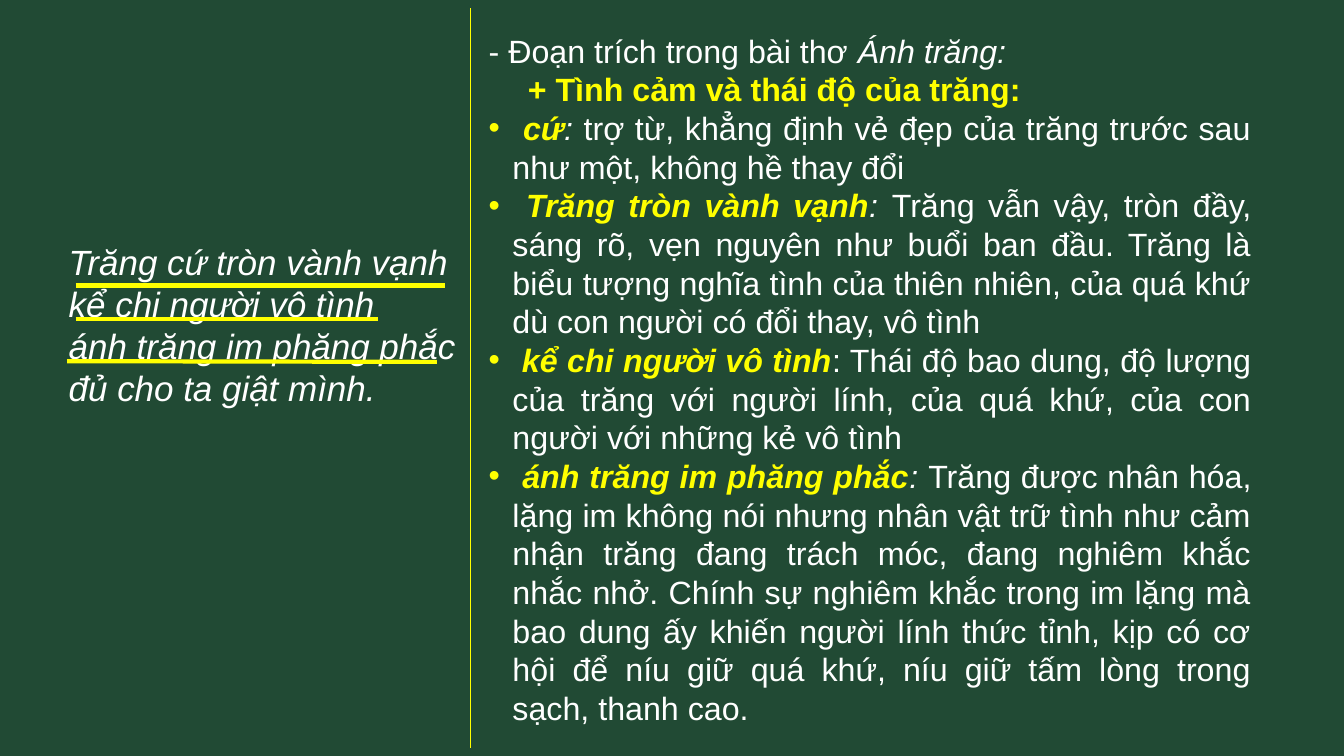
from dataclasses import dataclass

import pptx
import pptx.dml.color
import pptx.enum.shapes
import pptx.enum.text
import pptx.oxml
import pptx.oxml.ns
import pptx.util
from pptx.util import Pt


@dataclass(frozen=True)
class Theme:
    background: str = "214A34"
    text: str = "FFFFFF"
    accent: str = "FFFF00"
    font: str = "Arial"
    poem_size: float = 25
    analysis_size: float = 23
    line_height: float = 1.2
    divider_width: float = 0.5
    underline_width: float = 3


@dataclass(frozen=True)
class Rule:
    start: tuple[float, float]
    end: tuple[float, float]
    width: float


@dataclass(frozen=True)
class Span:
    text: str
    accent: bool = False
    bold: bool = False
    italic: bool = False


@dataclass(frozen=True)
class Line:
    spans: tuple[Span, ...]
    justified: bool = True
    bulleted: bool = False
    indent: float = 0


@dataclass(frozen=True)
class TextBox:
    left: float
    top: float
    width: float
    height: float
    size: float
    lines: tuple[Line, ...]


THEME = Theme()
BULLET_INDENT = 17


def gloss(quote: str, colon: str, meaning: str) -> Line:
    spans = (
        Span(quote, accent=True, bold=True, italic=True),
        Span(colon, italic=True),
        Span(meaning),
    )
    return Line(tuple(span for span in spans if span.text), bulleted=True)


POEM = TextBox(42, 168, 384, 128, THEME.poem_size, tuple(
    Line((Span(verse, italic=True),), justified=False)
    for verse in (
        "Trăng cứ tròn vành vạnh",
        "kể chi người vô tình",
        "ánh trăng im phăng phắc",
        "đủ cho ta giật mình.",
    )
))

ANALYSIS = TextBox(342, 18.7, 559.5, 509, THEME.analysis_size, (
    Line((Span("- Đoạn trích trong bài thơ "), Span("Ánh trăng:", italic=True))),
    Line((Span("+ Tình cảm và thái độ của trăng:", accent=True, bold=True),), indent=28),
    gloss(" cứ", ":", " trợ từ, khẳng định vẻ đẹp của trăng trước sau như một, không hề thay đổi"),
    gloss(
        " Trăng tròn vành vạnh", ": ",
        "Trăng vẫn vậy, tròn đầy, sáng rõ, vẹn nguyên như buổi ban đầu. "
        "Trăng là biểu tượng nghĩa tình của thiên nhiên, của quá khứ "
        "dù con người có đổi thay, vô tình",
    ),
    gloss(
        " kể chi người vô tình", "",
        ": Thái độ bao dung, độ lượng của trăng với người lính, của quá khứ, "
        "của con người với những kẻ vô tình",
    ),
    gloss(
        " ánh trăng im phăng phắc", ": ",
        "Trăng được nhân hóa, lặng im không nói nhưng nhân vật trữ tình như cảm nhận "
        "trăng đang trách móc, đang nghiêm khắc nhắc nhở. Chính sự nghiêm khắc trong "
        "im lặng mà bao dung ấy khiến người lính thức tỉnh, kịp có cơ hội để níu giữ "
        "quá khứ, níu giữ tấm lòng trong sạch, thanh cao.",
    ),
))

DIVIDER = Rule((336, 6), (336, 534), THEME.divider_width)
UNDERLINES = (
    Rule((54, 204), (318, 204), THEME.underline_width),
    Rule((54, 228), (270, 228), THEME.underline_width),
    Rule((48, 258), (312, 258.5), THEME.underline_width),
)


def color(value: str) -> pptx.dml.color.RGBColor:
    return pptx.dml.color.RGBColor.from_string(value)


def draw_rule(slide: pptx.slide.Slide, rule: Rule) -> None:
    connector = slide.shapes.add_connector(
        pptx.enum.shapes.MSO_CONNECTOR.STRAIGHT,
        *(Pt(value) for value in rule.start + rule.end),
    )
    connector.line.color.rgb = color(THEME.accent)
    connector.line.width = Pt(rule.width)
    pptx.oxml.ns.qn("a:effectLst")
    properties = connector._element.spPr
    properties.append(properties.makeelement(pptx.oxml.ns.qn("a:effectLst"), {}))


def add_bullet(paragraph: pptx.text.text._Paragraph) -> None:
    properties = paragraph._p.get_or_add_pPr()
    namespace = pptx.oxml.ns.nsdecls("a")
    for markup in (
        f'<a:buClr {namespace}><a:srgbClr val="{THEME.accent}"/></a:buClr>',
        f'<a:buFont {namespace} typeface="{THEME.font}"/>',
        f'<a:buChar {namespace} char="•"/>',
    ):
        properties.append(pptx.oxml.parse_xml(markup))


def fill_paragraph(paragraph: pptx.text.text._Paragraph, line: Line, size: float) -> None:
    alignment = pptx.enum.text.PP_ALIGN
    paragraph.alignment = alignment.JUSTIFY if line.justified else alignment.LEFT
    paragraph.line_spacing = Pt(size * THEME.line_height)
    properties = paragraph._p.get_or_add_pPr()
    margin = BULLET_INDENT if line.bulleted else 0
    properties.set("marL", str(Pt(margin)))
    properties.set("indent", str(Pt(line.indent - margin)))
    if line.bulleted:
        add_bullet(paragraph)
    paragraph.font.name = THEME.font
    paragraph.font.size = Pt(size)
    for span in line.spans:
        run = paragraph.add_run()
        run.text = span.text
        run.font.bold = span.bold
        run.font.italic = span.italic
        run.font.color.rgb = color(THEME.accent if span.accent else THEME.text)


def draw_text(slide: pptx.slide.Slide, box: TextBox) -> None:
    shape = slide.shapes.add_textbox(
        Pt(box.left), Pt(box.top), Pt(box.width), Pt(box.height)
    )
    frame = shape.text_frame
    frame.word_wrap = True
    for index, line in enumerate(box.lines):
        paragraph = frame.add_paragraph() if index else frame.paragraphs[0]
        fill_paragraph(paragraph, line, box.size)


def main() -> None:
    presentation = pptx.Presentation()
    presentation.slide_width = Pt(960)
    presentation.slide_height = Pt(540)
    slide = presentation.slides.add_slide(presentation.slide_layouts[6])
    slide.background.fill.solid()
    slide.background.fill.fore_color.rgb = color(THEME.background)
    draw_rule(slide, DIVIDER)
    for box in (POEM, ANALYSIS):
        draw_text(slide, box)
    for underline in UNDERLINES:
        draw_rule(slide, underline)
    presentation.save("out.pptx")


if __name__ == "__main__":
    main()
